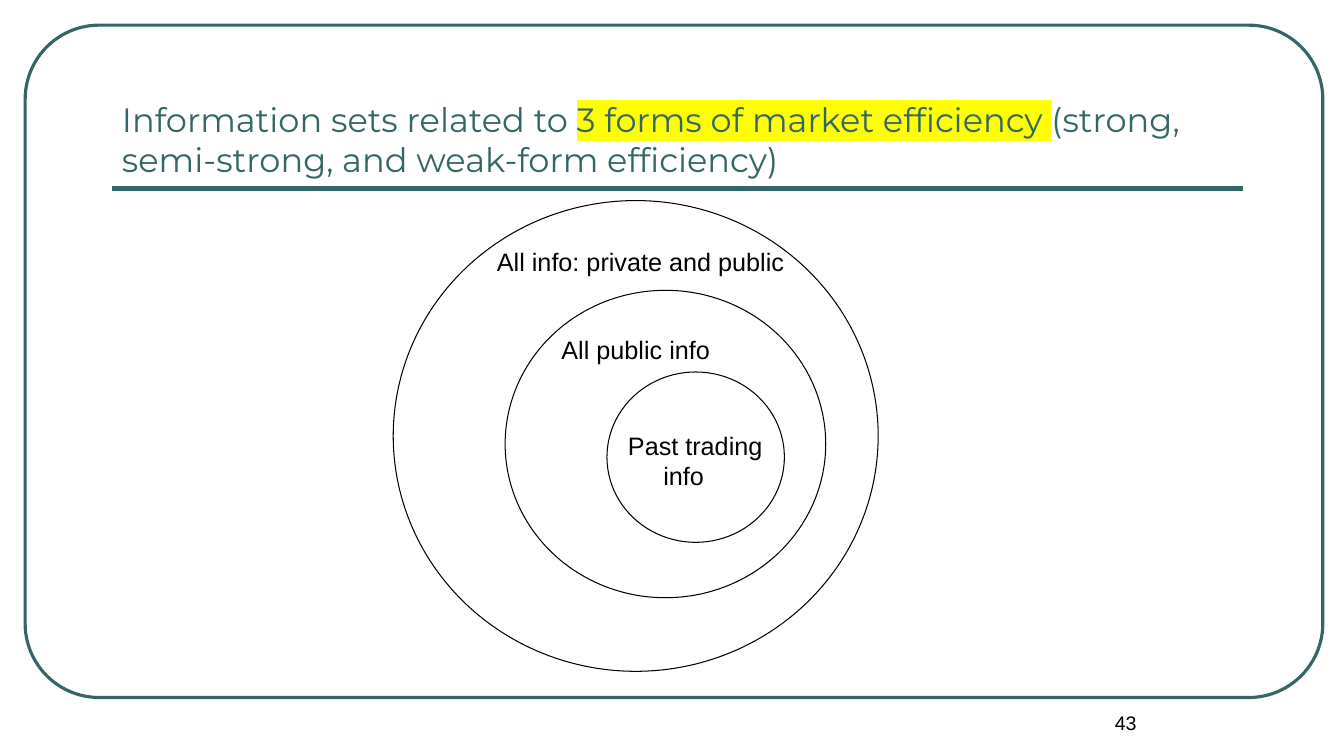
from lxml.etree import SubElement
from pptx import Presentation
from pptx.dml.color import RGBColor
from pptx.enum.shapes import MSO_CONNECTOR, MSO_SHAPE
from pptx.enum.text import MSO_ANCHOR, MSO_AUTO_SIZE, PP_ALIGN
from pptx.oxml.ns import qn
from pptx.util import Emu, Pt

SCALE = 9144
COLORS = {"teal": "336666", "ink": "000000", "mark": "FFFF00"}


def px(n):
    return Emu(n * SCALE)


def color(name):
    return RGBColor.from_string(COLORS[name])


def style(para, face, size, ink, align=PP_ALIGN.LEFT):
    para.alignment = align
    para.font.name = face
    para.font.size = Pt(size)
    para.font.color.rgb = color(ink)


def add_outline(slide, kind, box, ink, width):
    shape = slide.shapes.add_shape(kind, *map(px, box))
    shape.shadow.inherit = False
    shape.fill.background()
    shape.line.color.rgb = color(ink)
    shape.line.width = Pt(width)
    return shape


def add_rule(slide, start, end):
    rule = slide.shapes.add_connector(
        MSO_CONNECTOR.STRAIGHT, *map(px, start + end))
    rule.line.color.rgb = color("teal")
    rule.line.width = Pt(3)
    SubElement(rule._element.spPr, qn("a:effectLst"))


def add_title(slide, box, parts):
    title = slide.shapes.title
    title.left, title.top, title.width, title.height = map(px, box)
    frame = title.text_frame
    frame.auto_size = MSO_AUTO_SIZE.NONE
    frame.vertical_anchor = MSO_ANCHOR.BOTTOM
    para = frame.paragraphs[0]
    for text, marked in parts:
        run = para.add_run()
        run.text = text
        if marked:
            mark = SubElement(run._r.get_or_add_rPr(), qn("a:highlight"))
            SubElement(mark, qn("a:srgbClr"), val=COLORS["mark"])
    style(para, "Montserrat", 24, "teal")


def add_label(slide, box, lines, size=18, wrap=False, align=PP_ALIGN.LEFT):
    frame = slide.shapes.add_textbox(*map(px, box)).text_frame
    frame.word_wrap = wrap
    if not wrap:
        frame.auto_size = MSO_AUTO_SIZE.SHAPE_TO_FIT_TEXT
    for i, (text, indent) in enumerate(lines):
        para = frame.add_paragraph() if i else frame.paragraphs[0]
        para.text = text
        if indent:
            para._p.get_or_add_pPr().set("marL", str(px(indent)))
        style(para, "Arial", size, "ink", align)


def main():
    deck = Presentation()
    deck.slide_width, deck.slide_height = px(1333), px(750)
    slide = deck.slides.add_slide(deck.slide_layouts[5])

    border = add_outline(slide, MSO_SHAPE.ROUNDED_RECTANGLE,
                         (25, 25, 1287, 667), "teal", 2.25)
    border.adjustments[0] = 0.11
    add_rule(slide, (111, 187), (1233, 187))
    add_title(slide, (111, 58, 1122, 125), [
        ("Information sets related to ", False),
        ("3 forms of market efficiency ", True),
        ("(strong, semi-strong, and weak-form efficiency)", False),
    ])
    add_label(slide, (1000, 700, 233, 50), [("43", 0)], 14, True,
              PP_ALIGN.CENTER)

    rings = [
        ((390, 199, 481, 467), (483, 239, 308, 40),
         [("All info: private and public", 0)]),
        ((501, 288, 318, 305), (547, 327, 169, 40),
         [("All public info", 0)]),
        ((602, 369, 176, 169), (613, 422, 155, 71),
         [("Past trading", 0), ("info", 35)]),
    ]
    for ring, spot, lines in rings:
        add_outline(slide, MSO_SHAPE.OVAL, ring, "ink", 0.75)
        add_label(slide, spot, lines)

    deck.save("out.pptx")


if __name__ == "__main__":
    main()
